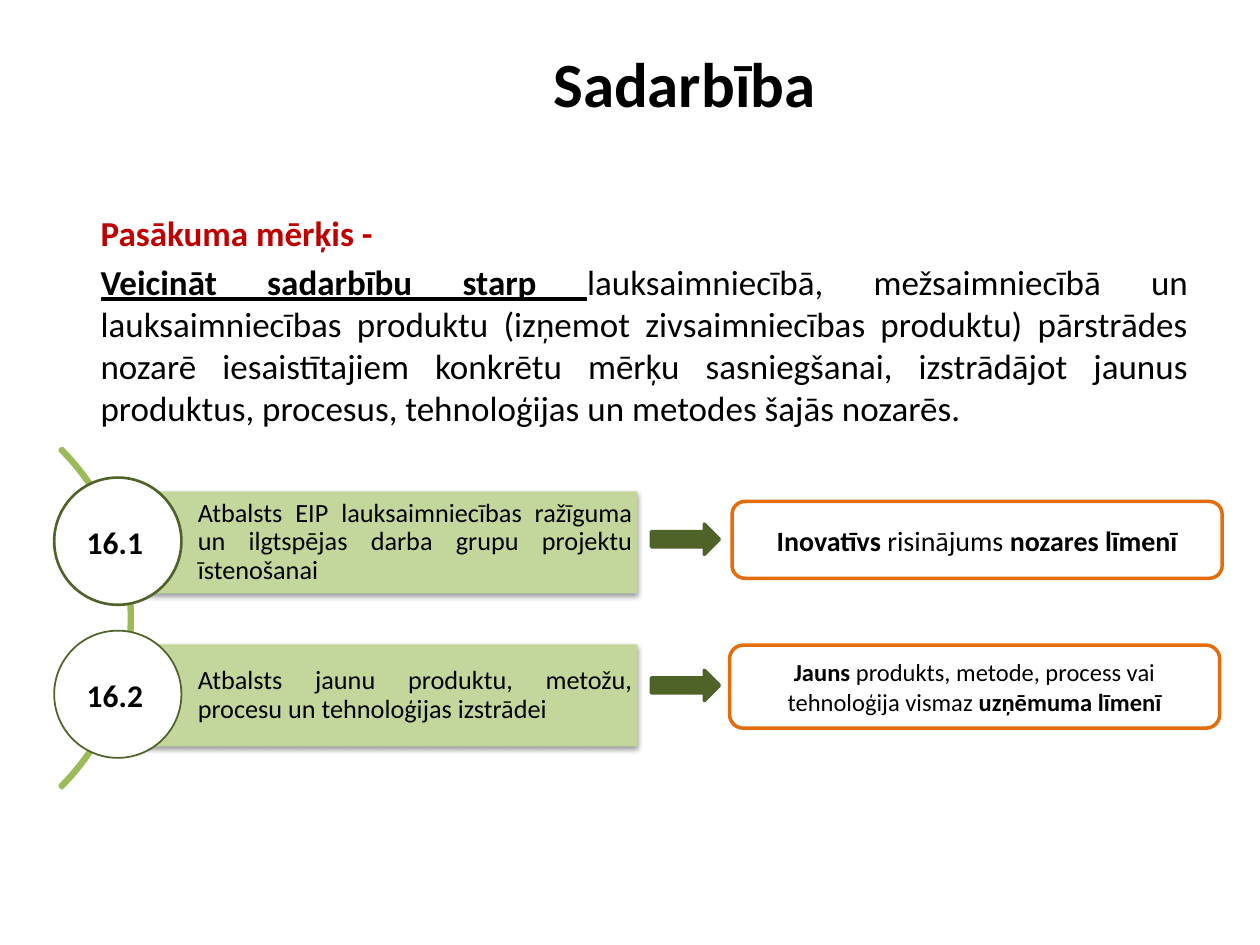
from lxml.etree import SubElement
from pptx import Presentation
from pptx.dml.color import RGBColor
from pptx.enum.shapes import MSO_SHAPE
from pptx.enum.text import MSO_ANCHOR, PP_ALIGN
from pptx.oxml.ns import qn
from pptx.util import Inches, Pt

INK = {
    "black": "000000",
    "white": "FFFFFF",
    "red": "C00000",
    "leaf": "9BBB59",
    "pale": "C3D69B",
    "moss": "4F6228",
    "rust": "E46C0A",
}
WIDE, HIGH = Inches(10), Inches(7.5)
COLS, ROWS = 100, 75
PITCH = 12.15
ITEMS = [
    {
        "code": "16.1",
        "aid": "Atbalsts EIP lauksaimniecības ražīguma un ilgtspējas darba grupu projektu īstenošanai",
        "ring": 1.5,
        "arrow": 41.6,
        "goal": (58.1, 39.8, 38.9, 6.1),
        "size": 16,
        "runs": [("Inovatīvs", "b"), (" risinājums ", ""), ("nozares līmenī", "b")],
    },
    {
        "code": "16.2",
        "aid": "Atbalsts jaunu produktu, metožu, procesu un tehnoloģijas izstrādei",
        "ring": 1,
        "arrow": 53.2,
        "goal": (57.9, 51.2, 38.9, 6.6),
        "size": 14,
        "runs": [
            ("Jauns", "b"),
            (" produkts, metode, process vai tehnoloģija vismaz ", ""),
            ("uzņēmuma līmenī", "b"),
        ],
    },
]


def tint(name):
    """Return a named colour."""
    return RGBColor.from_string(INK[name])


def place(x, y, w, h):
    """Turn grid columns and rows into slide lengths."""
    return [
        round(n * side / cells)
        for n, side, cells in ((x, WIDE, COLS), (y, HIGH, ROWS), (w, WIDE, COLS), (h, HIGH, ROWS))
    ]


def write(para, runs, size, ink="black", align=PP_ALIGN.LEFT):
    """Add styled runs to a paragraph."""
    para.alignment = align
    for text, style in runs:
        run = para.add_run()
        run.text = text
        font = run.font
        font.name, font.size = "Calibri", Pt(size)
        font.bold, font.underline = "b" in style, "u" in style
        font.color.rgb = tint(ink)


def label(slide, box):
    """Add a wrapping text box and return its frame."""
    frame = slide.shapes.add_textbox(*place(*box)).text_frame
    frame.word_wrap = True
    return frame


def shape(slide, kind, box, fill=None, line=None, width=1):
    """Add a preset shape with a plain fill and outline."""
    item = slide.shapes.add_shape(kind, *place(*box))
    item.shadow.inherit = False
    if fill:
        item.fill.solid()
        item.fill.fore_color.rgb = tint(fill)
    else:
        item.fill.background()
    if line:
        item.line.color.rgb = tint(line)
        item.line.width = Pt(width)
    else:
        item.line.fill.background()
    item.text_frame.word_wrap = True
    item.text_frame.vertical_anchor = MSO_ANCHOR.MIDDLE
    return item


def shade(item):
    """Drop a soft shadow straight below a shape."""
    glow = item._element.spPr.find(qn("a:effectLst"))
    drop = SubElement(glow, qn("a:outerShdw"), blurRad="40000", dist="20000", dir="5400000", rotWithShape="0")
    hue = SubElement(drop, qn("a:srgbClr"), val=INK["black"])
    SubElement(hue, qn("a:alpha"), val="38000")


def bar(slide, top, text):
    """Add a shadowed bar holding a support text."""
    item = shape(slide, MSO_SHAPE.RECTANGLE, (9.3, top, 41.3, 8.1), "pale")
    shade(item)
    frame = item.text_frame
    frame.margin_left = Inches(0.64)
    frame.margin_top = frame.margin_right = frame.margin_bottom = Inches(0.04)
    para = frame.paragraphs[0]
    para.line_spacing = 0.9
    write(para, [(text, "")], 15, align=PP_ALIGN.JUSTIFY)


def intro(slide):
    """Add the title and the aim of the measure."""
    head = label(slide, (21, 2.9, 66.7, 7.2))
    head.vertical_anchor = MSO_ANCHOR.MIDDLE
    write(head.paragraphs[0], [("Sadarbība", "b")], 36, align=PP_ALIGN.CENTER)
    body = label(slide, (7, 16.3, 88.3, 18.2))
    write(body.paragraphs[0], [("Pasākuma mērķis -", "b")], 20, "red")
    para = body.add_paragraph()
    para.space_before = Pt(4)
    rest = (
        "lauksaimniecībā, mežsaimniecībā un lauksaimniecības produktu "
        "(izņemot zivsaimniecības produktu) pārstrādes nozarē iesaistītajiem "
        "konkrētu mērķu sasniegšanai, izstrādājot jaunus produktus, procesus, "
        "tehnoloģijas un metodes šajās nozarēs."
    )
    write(para, [("Veicināt sadarbību starp ", "bu"), (rest, "")], 20, align=PP_ALIGN.JUSTIFY)


def arc(slide):
    """Add the thin arc that links the circles."""
    item = shape(slide, MSO_SHAPE.BLOCK_ARC, (-27.6, 30, 38.1, 38.1), line="leaf", width=2)
    for spot, value in enumerate((189, 27, 0.006)):
        item.adjustments[spot] = value


def row(slide, index, data):
    """Add one numbered support with its arrow and goal."""
    down = index * PITCH
    bar(slide, 39 + down, data["aid"])
    shape(slide, MSO_SHAPE.OVAL, (4.3, 37.9 + down, 10.1, 10.1), "white", "moss", data["ring"])
    code = label(slide, (5.9, 41 + down, 7.3, 4))
    write(code.paragraphs[0], [(data["code"], "b")], 18)
    shape(slide, MSO_SHAPE.RIGHT_ARROW, (51.7, data["arrow"], 5.4, 2.4), "moss", "moss", 2)
    goal = shape(slide, MSO_SHAPE.ROUNDED_RECTANGLE, data["goal"], "white", "rust", 2)
    write(goal.text_frame.paragraphs[0], data["runs"], data["size"], align=PP_ALIGN.CENTER)


def main():
    """Build and save the slide."""
    deck = Presentation()
    deck.slide_width, deck.slide_height = WIDE, HIGH
    slide = deck.slides.add_slide(deck.slide_layouts[6])
    intro(slide)
    arc(slide)
    for index, data in enumerate(ITEMS):
        row(slide, index, data)
    deck.save("out.pptx")


if __name__ == "__main__":
    main()
